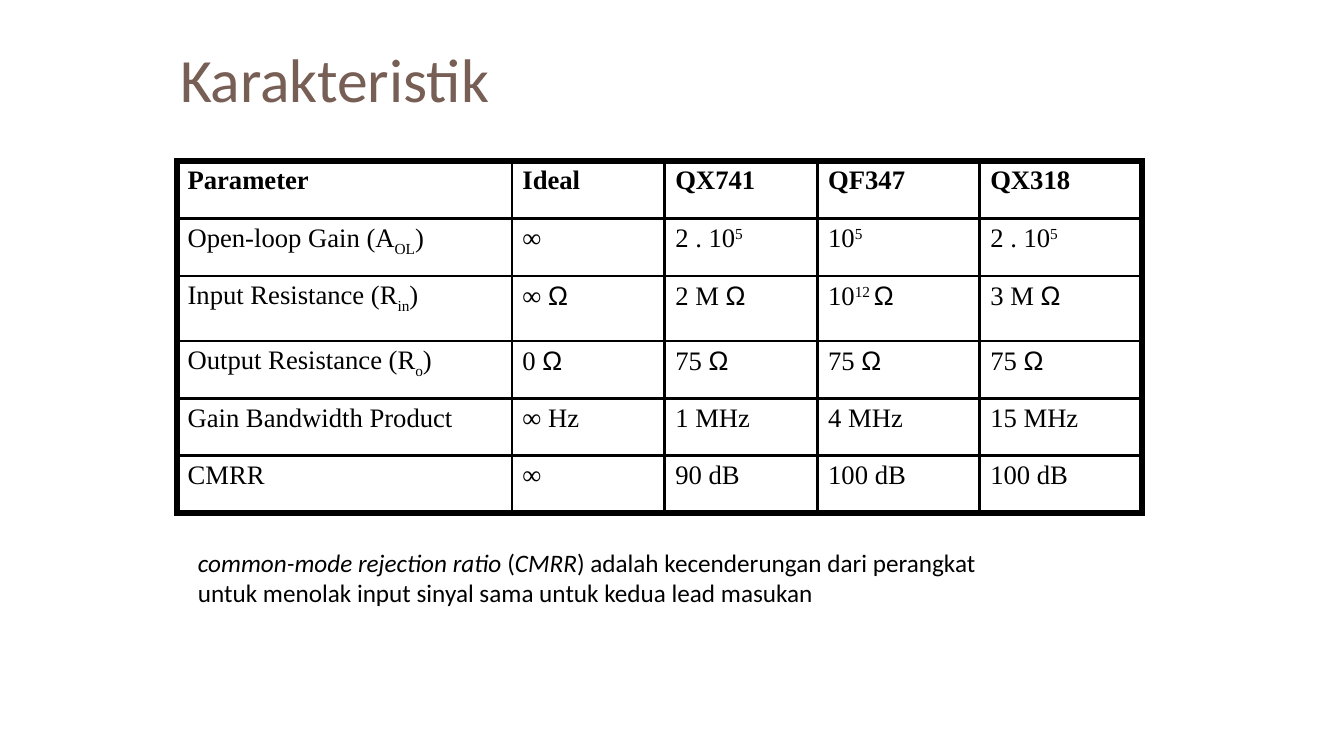
from lxml import etree
from pptx import Presentation
from pptx.dml.color import RGBColor
from pptx.enum import text
from pptx.oxml import ns
from pptx.util import Pt

BLACK = RGBColor(0x00, 0x00, 0x00)
BROWN = RGBColor(0x77, 0x5F, 0x55)

TITLE_FONT = {"name": "Calibri", "size": Pt(20.8)}
CELL_FONT = {"name": "Times New Roman", "size": Pt(9)}
NOTE_FONT = {"name": "Calibri", "size": Pt(8.5)}

# Run styles: font changes, plus a baseline shift in thousandths of a percent
SUB = {"baseline": -25000}
SUP = {"baseline": 30000}
ITALIC = {"italic": True}
OHM = ("Ω", {"name": "Arial"})

COLUMNS = [113.2, 51.7, 51.7, 54.8, 54.8]
ROWS = [19.4, 19.4, 22, 19.4, 19.4, 19.4]
PARAMETERS = [
    ["Parameter", "Ideal", "QX741", "QF347", "QX318"],
    [["Open-loop Gain (A", ("OL", SUB), ")"], "∞",
     ["2 . 10", ("5", SUP)], ["10", ("5", SUP)], ["2 . 10", ("5", SUP)]],
    [["Input Resistance (R", ("in", SUB), ")"], ["∞ ", OHM],
     ["2 M ", OHM], ["10", ("12 ", SUP), OHM], ["3 M ", OHM]],
    [["Output Resistance (R", ("o", SUB), ")"], ["0 ", OHM],
     ["75 ", OHM], ["75 ", OHM], ["75 ", OHM]],
    ["Gain Bandwidth Product", "∞ Hz", "1 MHz", "4 MHz", "15 MHz"],
    ["CMRR", "∞", "90 dB", "100 dB", "100 dB"],
]
NOTE = [
    ("common-mode rejection ratio", ITALIC), " (", ("CMRR", ITALIC),
    ") adalah kecenderungan dari perangkat untuk menolak input sinyal sama "
    "untuk kedua lead masukan",
]


def write_runs(p, runs, font, color=BLACK):
    """Fill a paragraph from plain strings and (string, style) pairs."""
    for item in [runs] if isinstance(runs, str) else runs:
        words, style = (item, {}) if isinstance(item, str) else item
        r = p.add_run()
        r.text = words
        r.font.color.rgb = color
        for key, value in {**font, **style}.items():
            if key == "baseline":
                r._r.get_or_add_rPr().set(key, str(value))
            else:
                setattr(r.font, key, value)


def add_text(slide, box, runs, font, color=BLACK, anchor=text.MSO_ANCHOR.TOP):
    sp = slide.shapes.add_textbox(*map(Pt, box))
    tf = sp.text_frame
    tf.word_wrap = True
    tf.vertical_anchor = anchor
    write_runs(tf.paragraphs[0], runs, font, color)


def set_borders(cell, widths):
    """Draw the cell's sides; widths are left, right, top, bottom."""
    tcPr = cell._tc.get_or_add_tcPr()
    for i, (side, width) in enumerate(zip("LRTB", widths)):
        ln = etree.Element(ns.qn(f"a:ln{side}"), w=str(Pt(width)))
        fill = etree.SubElement(ln, ns.qn("a:solidFill"))
        etree.SubElement(fill, ns.qn("a:srgbClr"), val=str(BLACK))
        tcPr.insert(i, ln)


def add_parameter_table(slide, left, top):
    n_rows, n_cols = len(ROWS), len(COLUMNS)
    box = map(Pt, (left, top, sum(COLUMNS), sum(ROWS)))
    table = slide.shapes.add_table(n_rows, n_cols, *box).table
    table.first_row = table.horz_banding = False
    for column, width in zip(table.columns, COLUMNS):
        column.width = Pt(width)
    for row, height in zip(table.rows, ROWS):
        row.height = Pt(height)

    for i, values in enumerate(PARAMETERS):
        for j, runs in enumerate(values):
            cell = table.cell(i, j)
            cell.fill.background()
            cell.margin_left = cell.margin_right = Pt(3.6)
            cell.margin_top = cell.margin_bottom = Pt(1.7)
            write_runs(cell.text_frame.paragraphs[0], runs,
                       {**CELL_FONT, "bold": i == 0})
            # Heavy frame around the outside, thin lines within
            outer = (j == 0, j == n_cols - 1, i == 0, i == n_rows - 1)
            set_borders(cell, [2.25 if edge else 1 for edge in outer])


def build_slide(prs, left, top, width):
    slide = prs.slides.add_slide(prs.slide_layouts[6])
    # Title
    add_text(slide, (left - 6, top, width + 9, 36.7), "Karakteristik",
             TITLE_FONT, BROWN, text.MSO_ANCHOR.MIDDLE)
    # Op-amp parameters
    add_parameter_table(slide, left, top + 46.6)
    # Note on CMRR
    add_text(slide, (left, top + 173.5, width, 28), NOTE, NOTE_FONT)


def main():
    prs = Presentation()
    prs.slide_width, prs.slide_height = Pt(454.3), Pt(255.6)
    build_slide(prs, 59.8, 7.9, 295)
    prs.save("out.pptx")


if __name__ == "__main__":
    main()
